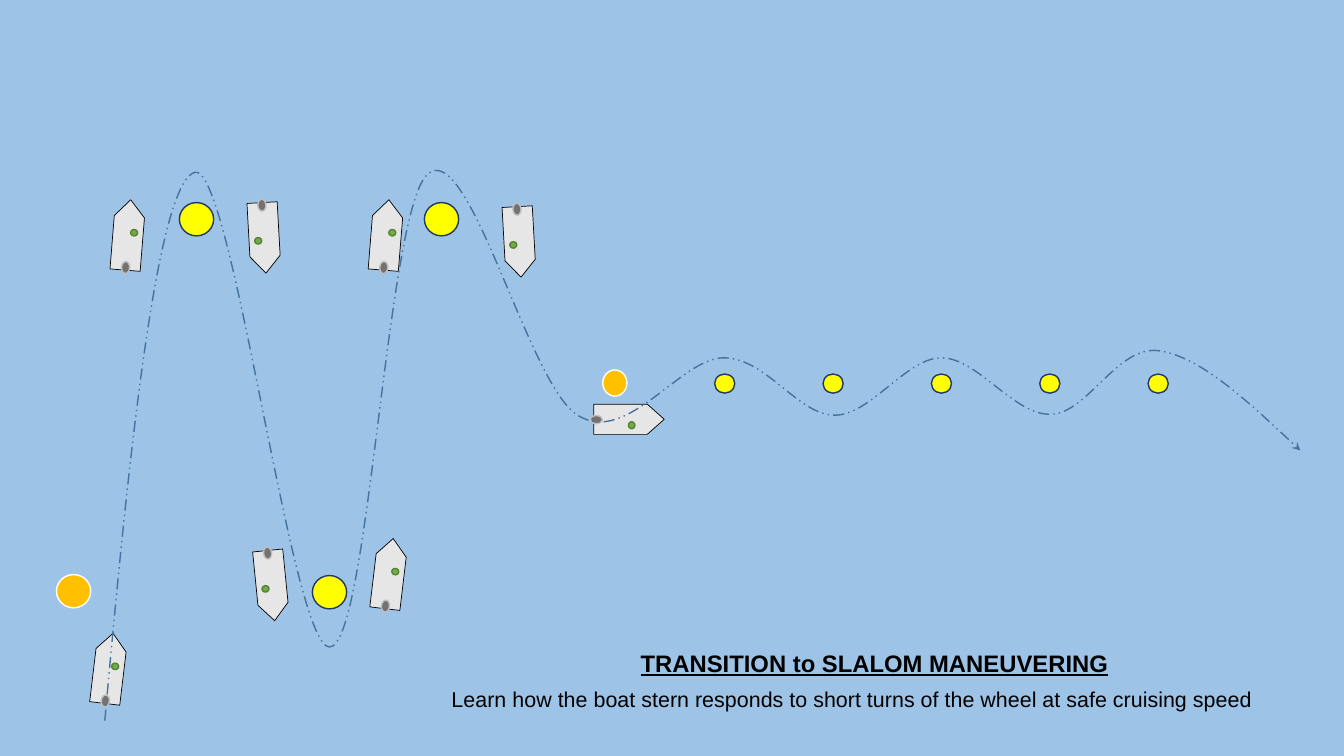
from math import cos, radians, sin
from pptx import Presentation, oxml, util as u
from pptx.dml.color import RGBColor
from pptx.enum import dml, shapes, text
from pptx.oxml import ns

WATER = RGBColor(0x9D, 0xC3, 0xE6)
WHITE = RGBColor(0xFF, 0xFF, 0xFF)
BLACK = RGBColor(0, 0, 0)
AMBER = RGBColor(0xFF, 0xC0, 0x00)
YELLOW = RGBColor(0xFF, 0xFF, 0x00)
NAVY = RGBColor(0x20, 0x38, 0x64)
HULL = RGBColor(0xE7, 0xE6, 0xE6)
GREEN = RGBColor(0x70, 0xAD, 0x47)
MOSS = RGBColor(0x54, 0x82, 0x35)
GREY = RGBColor(0x76, 0x71, 0x71)
SILVER = RGBColor(0xBF, 0xBF, 0xBF)
BLUE = RGBColor(0x43, 0x73, 0x9E)

OVAL = shapes.MSO_SHAPE.OVAL
PLATE = shapes.MSO_SHAPE.PENTAGON
BIG, SMALL = (24.5, 23.8), (14.4, 13.7)

BOATS = [
    (77.8, 477.4, 276.8), (91.4, 167.8, 274.6),
    (188.6, 169.9, 86.8), (193.7, 418.3, 84.3),
    (277.9, 409.7, 276.8), (275.8, 167.8, 274.6),
    (370.8, 172.8, 86.8), (449.3, 299.5, 0),
]
START = (74.9, 514.8)
CURVES = [
    ((92.2, 321.1), (112.3, 131.8), (139, 123.1)),
    ((165.6, 114.5), (208.1, 462.2), (235.4, 462.2)),
    ((263.5, 462.2), (275.8, 151.9), (305.3, 124.6)),
    ((334.8, 97.2), (377.3, 275), (412.6, 296.6)),
    ((447.8, 319), (486, 255.6), (517, 255.6)),
    ((547.2, 255.6), (570.2, 296.6), (596.2, 296.6)),
    ((622.1, 296.6), (647.3, 255.6), (672.5, 255.6)),
    ((698.4, 255.6), (725, 297.4), (751, 295.9)),
    ((776.9, 295.2), (798.5, 246.2), (828, 250.6)),
    ((857.5, 254.9), (892.8, 288), (928.8, 321.8)),
]
LINES = [
    ("TRANSITION to SLALOM MANEUVERING", text.PP_ALIGN.CENTER,
     {"size": u.Pt(17), "bold": True, "underline": True}),
    ("Learn how the boat stern responds to short turns of the wheel "
     "at safe cruising speed", text.PP_ALIGN.LEFT, {"size": u.Pt(15.3)}),
]


class Chart:
    """Draws buoys, boats, a route and captions on one slide."""

    font = "Arial"

    def __init__(self, slide):
        self.slide = slide
        fill = slide.background.fill
        fill.solid()
        fill.fore_color.rgb = WATER

    def apply(self, item, form):
        for name, value in form.items():
            setattr(item, name, value)

    def mark(self, kind, mid, size, fill, edge, width=1, turn=0, host=None):
        (x, y), (w, h) = mid, size
        box = [u.Pt(v) for v in (x - w / 2, y - h / 2, w, h)]
        item = (host or self.slide).shapes.add_shape(kind, *box)
        item.shadow.inherit = False
        item.rotation = turn
        item.fill.solid()
        item.fill.fore_color.rgb = fill
        item.line.color.rgb = edge
        item.line.width = u.Pt(width)
        return item

    def buoy(self, mid, size, fill=YELLOW, edge=NAVY):
        self.mark(OVAL, mid, size, fill, edge)

    def boat(self, x, y, head):
        group = self.slide.shapes.add_group_shape()
        hull = self.mark(PLATE, (x, y), (50.4, 21.6), HULL, BLACK, 0.5, head, group)
        hull.adjustments[0] = 0.563
        c, s = cos(radians(head)), sin(radians(head))
        parts = [(1.9, 4.3, (5, 4.6), GREEN, MOSS),
                 (-23.4, 0.2, (5.8, 8.6), GREY, SILVER)]
        for ahead, side, size, fill, edge in parts:
            mid = (x + ahead * c - side * s, y + ahead * s + side * c)
            self.mark(OVAL, mid, size, fill, edge, 1, (head + 90) % 360, group)

    def route(self, start, curves):
        ends = [[u.Pt(v) for v in curve[-1]] for curve in curves]
        pen = self.slide.shapes.build_freeform(*[u.Pt(v) for v in start])
        pen.add_line_segments(ends, close=False)
        item = pen.convert_to_shape()
        item.shadow.inherit = False
        item.fill.background()
        item.line.color.rgb = BLUE
        self.apply(item.line, {"width": u.Pt(1),
                               "dash_style": dml.MSO_LINE.DASH_DOT_DOT})
        legs = list(item.element.iter(ns.qn("a:lnTo")))
        for leg, curve in zip(legs, curves):
            bend = oxml.parse_xml(f"<a:cubicBezTo {ns.nsdecls('a')}/>")
            for x, y in curve:
                spot = bend.makeelement(ns.qn("a:pt"), {
                    "x": str(u.Pt(x) - item.left), "y": str(u.Pt(y) - item.top)})
                bend.append(spot)
            leg.getparent().replace(leg, bend)
        line = next(item.element.iter(ns.qn("a:ln")))
        line.append(oxml.parse_xml(f'<a:tailEnd {ns.nsdecls("a")} type="stealth"/>'))

    def words(self, box, lines):
        frame = self.slide.shapes.add_textbox(*[u.Pt(v) for v in box]).text_frame
        frame.word_wrap = True
        for i, (words, align, form) in enumerate(lines):
            para = frame.add_paragraph() if i else frame.paragraphs[0]
            self.apply(para, {"alignment": align, "line_spacing": 0.8,
                              "space_before": u.Pt(10)})
            run = para.add_run()
            run.text = words
            self.apply(run.font, {"name": self.font, **form})
            run.font.color.rgb = BLACK


def main():
    deck = Presentation()
    deck.slide_width, deck.slide_height = u.Pt(960), u.Pt(540)
    chart = Chart(deck.slides.add_slide(deck.slide_layouts[6]))
    chart.buoy((52.6, 422.3), BIG, AMBER, WHITE)
    chart.buoy((439.2, 273.6), (17.3, 18.7), AMBER, WHITE)
    for mid in [(140.4, 156.6), (235.4, 423), (315.4, 156.6)]:
        chart.buoy(mid, BIG)
    for i in range(5):
        chart.buoy((517.7 + 77.4 * i, 274), SMALL)
    for boat in BOATS:
        chart.boat(*boat)
    chart.route(START, CURVES)
    chart.words((315.4, 463.7, 618.5, 59.8), LINES)
    deck.save("out.pptx")


if __name__ == "__main__":
    main()
